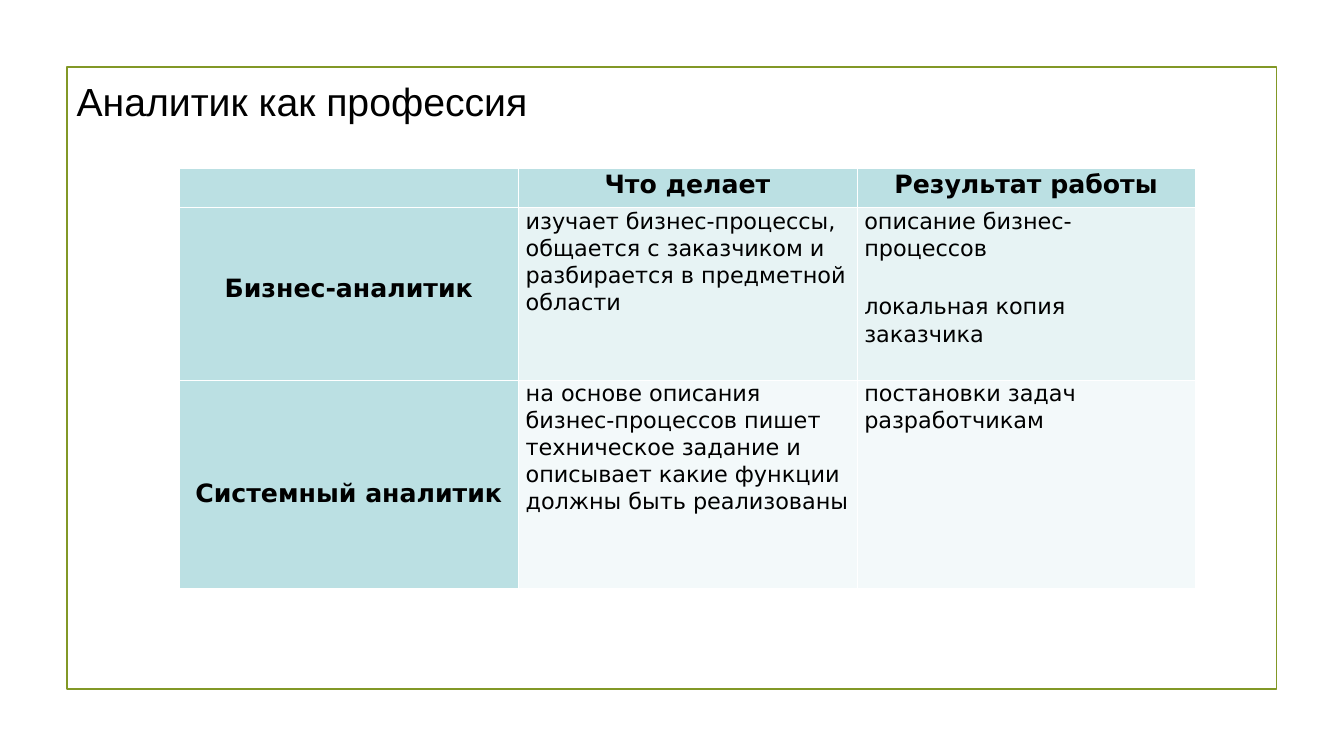
from pptx import Presentation
from pptx.dml.color import RGBColor
from pptx.enum.shapes import MSO_SHAPE as Kind
from pptx.enum.text import MSO_ANCHOR as Anchor, PP_ALIGN as Align
from pptx.oxml import parse_xml
from pptx.oxml.ns import nsdecls
from pptx.util import Pt

HEAD, BAND, PALE = "BBE0E3", "E7F3F4", "F3F9FA"
THIN, BOLD = 0.23, 0.75
WIDTH = 241.9
ROWS = [28.1, 123.1, 148.3]

TITLE = {"name": "Arial", "size": Pt(28)}
LABEL = {"name": "DejaVu Sans", "size": Pt(18), "bold": True}
BODY = {"name": "DejaVu Sans", "size": Pt(16), "bold": False}

# Each row: body fill, space above its label, cells as lists of paragraphs
GRID = [
    (HEAD, 0, [[], ["Что делает"], ["Результат работы"]]),
    (BAND, 46.5, [
        ["Бизнес-аналитик"],
        ["изучает бизнес-процессы, общается с заказчиком и "
         "разбирается в предметной области"],
        ["описание бизнес-процессов", "локальная копия заказчика"]]),
    (PALE, 69.8, [
        ["Системный аналитик"],
        ["на основе описания бизнес-процессов пишет техническое задание и "
         "описывает какие функции должны быть реализованы"],
        ["постановки задач разработчикам"]]),
]


def color(code):
    return RGBColor.from_string(code)


def apply(item, style):
    for key, value in style.items():
        setattr(item, key, value)


def write(para, text, style):
    run = para.add_run()
    run.text = text
    apply(run.font, style)
    run.font.color.rgb = color("000000")


def add_frame(slide):
    frame = slide.shapes.add_shape(
        Kind.RECTANGLE, Pt(47.8), Pt(48), Pt(864), Pt(444))
    frame.shadow.inherit = False
    frame.fill.background()
    frame.line.color.rgb = color("829826")
    frame.line.width = Pt(1.25)


def add_title(slide, text):
    box = slide.shapes.add_textbox(Pt(54.7), Pt(55.4), Pt(864), Pt(33.8))
    apply(box.text_frame, {
        "word_wrap": True, "vertical_anchor": Anchor.MIDDLE,
        "margin_left": 0, "margin_top": 0,
        "margin_right": 0, "margin_bottom": 0})
    write(box.text_frame.paragraphs[0], text, TITLE)


def add_edges(cell, sides):
    props = cell._tc.get_or_add_tcPr()
    for side, width in sides.items():
        props.append(parse_xml(
            f'<a:ln{side} {nsdecls("a")} w="{Pt(width)}"><a:solidFill>'
            f'<a:srgbClr val="FFFFFF"/></a:solidFill></a:ln{side}>'))


def fill_cell(cell, texts, fill, top, label):
    apply(cell, {"margin_left": Pt(5.4), "margin_right": Pt(5.4),
                 "margin_top": Pt(top), "margin_bottom": 0})
    cell.fill.solid()
    cell.fill.fore_color.rgb = color(fill)
    for num, text in enumerate(texts):
        frame = cell.text_frame
        para = frame.add_paragraph() if num else frame.paragraphs[0]
        para.alignment = Align.CENTER if label else Align.LEFT
        para.line_spacing = 1.11 if num else 1.04
        if num:
            para.space_before = Pt(20.7)
        write(para, text, LABEL if label else BODY)


def add_grid(slide):
    table = slide.shapes.add_table(
        len(ROWS), 3, Pt(128.2), Pt(120.4), Pt(3 * WIDTH), Pt(sum(ROWS))).table
    for col in table.columns:
        col.width = Pt(WIDTH)
    for y, (fill, top, cells) in enumerate(GRID):
        table.rows[y].height = Pt(ROWS[y])
        # The line under the header row is thicker
        sides = {"L": THIN, "R": THIN, "T": BOLD if y == 1 else THIN,
                 "B": BOLD if y == 0 else THIN}
        for x, texts in enumerate(cells):
            cell = table.cell(y, x)
            add_edges(cell, sides)
            fill_cell(cell, texts, HEAD if x == 0 else fill,
                      top if x == 0 else 0, x == 0 or y == 0)


def main():
    deck = Presentation()
    deck.slide_width, deck.slide_height = Pt(960), Pt(540)
    slide = deck.slides.add_slide(deck.slide_layouts[6])
    add_frame(slide)
    add_title(slide, "Аналитик как профессия")
    add_grid(slide)
    deck.save("out.pptx")


if __name__ == "__main__":
    main()
